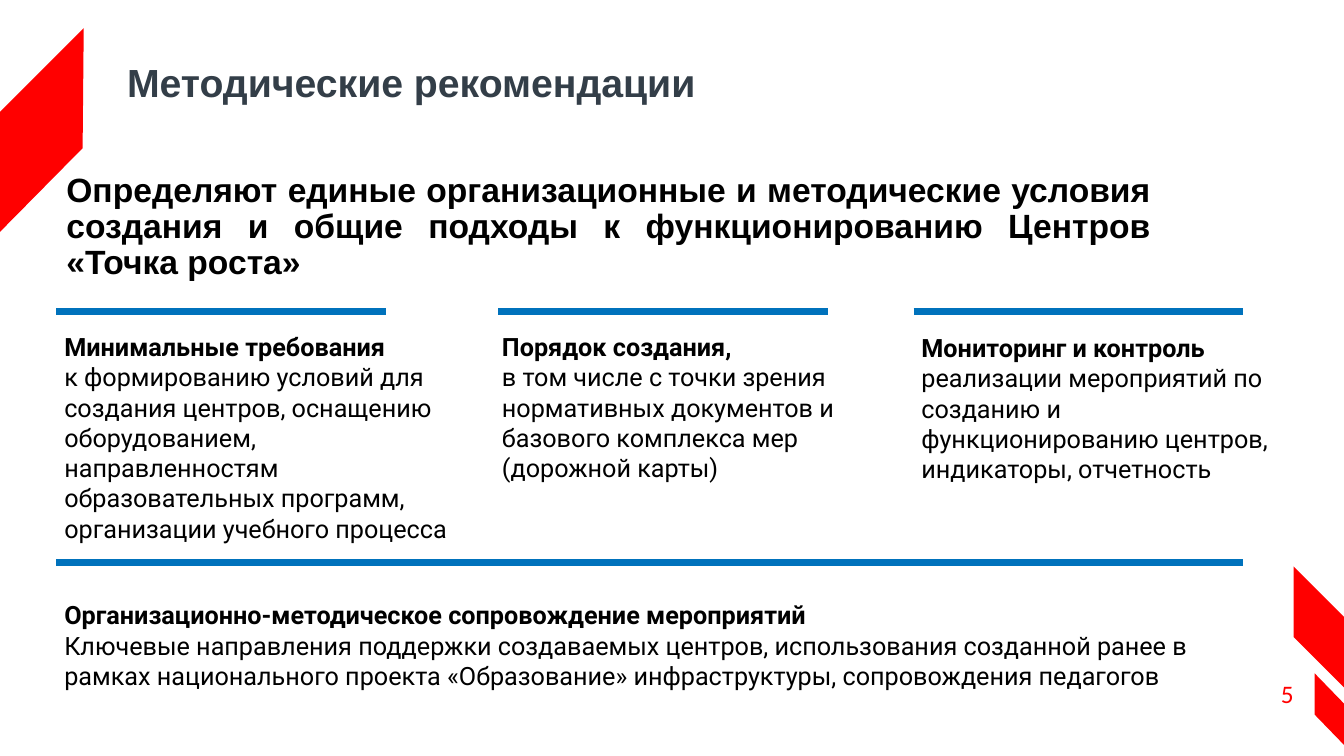
"""Build the slide on methodical recommendations; places are percent of the slide's size."""
from dataclasses import dataclass

from lxml import etree
from pptx import Presentation
from pptx import util as u
from pptx.dml.color import RGBColor
from pptx.enum import shapes, text
from pptx.oxml import ns

TITLE = "Методические рекомендации"
INTRO = ("Определяют единые организационные и методические условия создания "
         "и общие подходы к функционированию Центров «Точка роста»")
PAGE_NUMBER = "5"
SECTIONS = [
    ((4.05, 43.2, 31.66, 23.33), "Минимальные требования",
     "к формированию условий для создания центров, оснащению оборудованием, "
     "направленностям образовательных программ, организации учебного процесса"),
    ((36.61, 43.2, 29.26, 20.4), "Порядок создания,",
     "в том числе с точки зрения нормативных документов и базового комплекса мер "
     "(дорожной карты)"),
    ((67.82, 43.33, 29.26, 26.53), "Мониторинг и контроль",
     "реализации мероприятий по созданию и функционированию центров, "
     "индикаторы, отчетность"),
    ((4.05, 78.67, 88.45, 10.4), "Организационно-методическое сопровождение мероприятий",
     "Ключевые направления поддержки создаваемых центров, использования созданной ранее "
     "в рамках национального проекта «Образование» инфраструктуры, сопровождения педагогов"),
]
RULE_LEFTS, RULE_WIDTH, RULE_RIGHT = (4.2, 37.06, 67.97), 24.53, 92.5
TOP_RULE, BOTTOM_RULE = 41.2, 74.4
STRIPES = [
    [(0, 30.67), (0, 14.8), (6.23, 3.73), (6.15, 19.6)],
    [(100, 90.93), (96.25, 84.27), (96.25, 74.93), (100, 81.6)],
    [(100, 98.53), (97.82, 94.53), (97.82, 89.07), (100, 93.07)],
]


@dataclass(frozen=True)
class Theme:
    red: str = "FF0000"
    blue: str = "0072BC"
    slate: str = "333E48"
    black: str = "000000"
    heading_font: str = "Arial"
    body_font: str = "Roboto"
    number_font: str = "Calibri"
    title_size: int = 28
    intro_size: int = 24
    body_size: int = 18
    rule_width: float = 4.5


THEME = Theme()
WIDTH, HEIGHT = u.Inches(13.33), u.Inches(7.5)


def across(share):
    return round(WIDTH * share / 100)


def down(share):
    return round(HEIGHT * share / 100)


def add_text(slide, place, side_inset=0.1, anchor=text.MSO_ANCHOR.TOP):
    left, top, width, height = place
    shape = slide.shapes.add_textbox(across(left), down(top), across(width), down(height))
    frame = shape.text_frame
    frame.word_wrap = True
    frame.vertical_anchor = anchor
    frame.margin_left = frame.margin_right = u.Inches(side_inset)
    frame.margin_top = frame.margin_bottom = u.Inches(0.05)
    return frame.paragraphs[0]


def add_run(paragraph, words, font, size, color, bold=False):
    run = paragraph.add_run()
    run.text = words
    run.font.name = font
    run.font.size = u.Pt(size)
    run.font.bold = bold
    run.font.color.rgb = RGBColor.from_string(color)


def add_rule(slide, left, right, top):
    rule = slide.shapes.add_connector(
        shapes.MSO_CONNECTOR.STRAIGHT, across(left), down(top), across(right), down(top))
    rule.line.color.rgb = RGBColor.from_string(THEME.blue)
    rule.line.width = u.Pt(THEME.rule_width)
    etree.SubElement(rule._element.spPr, ns.qn("a:effectLst"))


def add_stripe(slide, corners):
    points = [(across(x), down(y)) for x, y in corners]
    builder = slide.shapes.build_freeform(*points[0])
    builder.add_line_segments(points[1:], close=True)
    shape = builder.convert_to_shape()
    shape.shadow.inherit = False
    shape.fill.solid()
    shape.fill.fore_color.rgb = RGBColor.from_string(THEME.red)
    shape.line.fill.background()


def main():
    presentation = Presentation()
    presentation.slide_width, presentation.slide_height = WIDTH, HEIGHT
    slide = presentation.slides.add_slide(presentation.slide_layouts[6])

    number = add_text(slide, (92.87, 89.07, 3.75, 5.33), side_inset=0.05)
    number.alignment = text.PP_ALIGN.RIGHT
    add_run(number, PAGE_NUMBER, THEME.number_font, THEME.body_size, THEME.red)

    for corners in STRIPES:
        add_stripe(slide, corners)

    title = add_text(slide, (9.08, 5.33, 65.49, 11.73), 0.05, text.MSO_ANCHOR.MIDDLE)
    title.line_spacing = 0.9
    add_run(title, TITLE, THEME.heading_font, THEME.title_size, THEME.slate, bold=True)

    intro = add_text(slide, (4.2, 22.27, 82.15, 23.33))
    intro.alignment = text.PP_ALIGN.JUSTIFY
    intro.line_spacing = 0.9
    add_run(intro, INTRO, THEME.heading_font, THEME.intro_size, THEME.black, bold=True)

    for place, heading, body in SECTIONS:
        paragraph = add_text(slide, place)
        add_run(paragraph, heading, THEME.body_font, THEME.body_size, THEME.black, bold=True)
        paragraph.add_line_break()
        add_run(paragraph, body, THEME.body_font, THEME.body_size, THEME.black)

    for left in RULE_LEFTS:
        add_rule(slide, left, left + RULE_WIDTH, TOP_RULE)
    add_rule(slide, RULE_LEFTS[0], RULE_RIGHT, BOTTOM_RULE)

    presentation.save("out.pptx")


if __name__ == "__main__":
    main()
